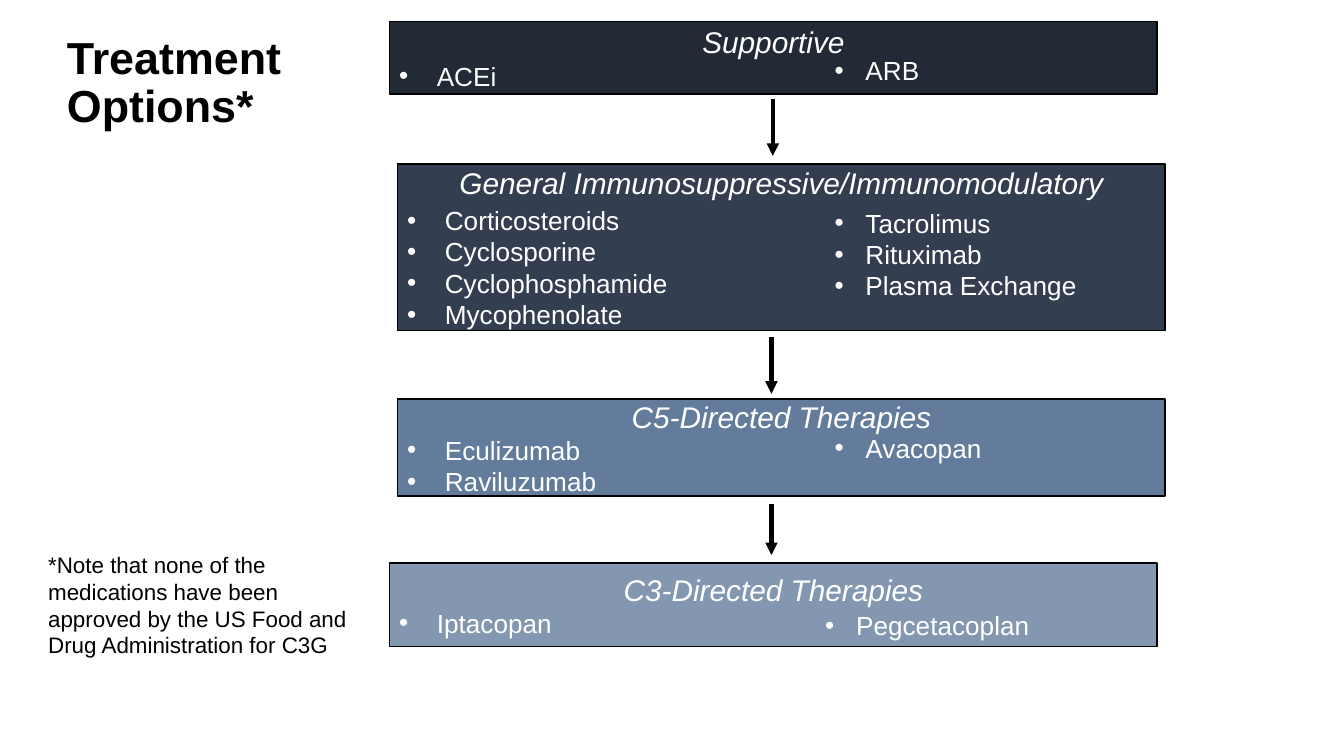
from lxml import etree
from pptx import Presentation
from pptx.dml.color import RGBColor
from pptx.enum.shapes import MSO_CONNECTOR, MSO_SHAPE
from pptx.enum.text import MSO_ANCHOR, PP_ALIGN
from pptx.oxml.ns import qn
from pptx.util import Inches, Pt

BLACK = RGBColor(0x00, 0x00, 0x00)
WHITE = RGBColor(0xFF, 0xFF, 0xFF)
NAVY = RGBColor(0x22, 0x2A, 0x35)
SLATE = RGBColor(0x33, 0x3F, 0x50)
STEEL = RGBColor(0x64, 0x7C, 0x9C)
MIST = RGBColor(0x84, 0x97, 0xB0)
TOP, MIDDLE, BOTTOM = MSO_ANCHOR.TOP, MSO_ANCHOR.MIDDLE, MSO_ANCHOR.BOTTOM
LEFT, CENTER = PP_ALIGN.LEFT, PP_ALIGN.CENTER

BOX_WIDTH = 5.71
COLUMN_WIDTH = 2.46
LINE_HEIGHT = 0.24


def set_frame(shape, anchor, margins):
    """Wrap the text, anchor it and set (side, top and bottom) margins in inches."""
    frame = shape.text_frame
    side, end = margins
    settings = {
        "word_wrap": True, "vertical_anchor": anchor,
        "margin_left": Inches(side), "margin_right": Inches(side),
        "margin_top": Inches(end), "margin_bottom": Inches(end),
    }
    for name, value in settings.items():
        setattr(frame, name, value)
    return frame


def write(frame, text, size, color, indent=0, alignment=LEFT, **font_format):
    """Fill the empty first paragraph or add one; an indent gives it a bullet."""
    paragraph = frame.paragraphs[0]
    if paragraph.runs:
        paragraph = frame.add_paragraph()
    paragraph.alignment = alignment
    if indent:
        properties = paragraph._p.get_or_add_pPr()
        properties.set("marL", str(Inches(indent)))
        properties.set("indent", str(-Inches(indent)))
        etree.SubElement(properties, qn("a:buFont"), typeface="Arial")
        etree.SubElement(properties, qn("a:buChar"), char="•")
    run = paragraph.add_run()
    run.text = text
    run.font.color.rgb = color
    font_format.update(name="Arial", size=Pt(size))
    for name, value in font_format.items():
        setattr(run.font, name, value)
    return paragraph


presentation = Presentation()
presentation.slide_width = Inches(10)
presentation.slide_height = Inches(10) * 9 // 16
slide = presentation.slides.add_slide(presentation.slide_layouts[6])

# Box left, top, height, fill; heading; left drugs and the gap above them in
# points; right drugs with the left and bottom of their column
stages = [
    (2.9, 0.16, 0.54, NAVY, "Supportive", ["ACEi"], 0, ["ARB"], 6.21, 0.64),
    (2.96, 1.22, 1.24, SLATE, "General Immunosuppressive/Immunomodulatory",
     ["Corticosteroids", "Cyclosporine", "Cyclophosphamide", "Mycophenolate"], 2,
     ["Tacrolimus", "Rituximab", "Plasma Exchange"], 6.21, 2.24),
    (2.96, 2.97, 0.72, STEEL, "C5-Directed Therapies",
     ["Eculizumab", "Raviluzumab"], 0, ["Avacopan"], 6.21, 3.45),
    (2.9, 4.19, 0.62, MIST, "C3-Directed Therapies",
     ["Iptacopan"], 0, ["Pegcetacoplan"], 6.14, 4.77),
]
for (left, top, height, fill, heading, left_drugs, gap,
     right_drugs, column_left, column_bottom) in stages:
    box = slide.shapes.add_shape(
        MSO_SHAPE.RECTANGLE, Inches(left), Inches(top), Inches(BOX_WIDTH), Inches(height))
    box.shadow.inherit = False
    box.fill.solid()
    box.fill.fore_color.rgb = fill
    box.line.color.rgb = BLACK
    box.line.width = Pt(0.75)
    frame = set_frame(box, MIDDLE, (0.07, 0.04))
    write(frame, heading, 16, WHITE, alignment=CENTER, italic=True)
    for drug in left_drugs:
        write(frame, drug, 14, WHITE, indent=0.28)
    frame.paragraphs[1].space_before = Pt(gap)

    column_height = LINE_HEIGHT * len(right_drugs)
    column = slide.shapes.add_textbox(
        Inches(column_left), Inches(column_bottom - column_height),
        Inches(COLUMN_WIDTH), Inches(column_height))
    frame = set_frame(column, BOTTOM, (0, 0))
    for drug in right_drugs:
        write(frame, drug, 14, WHITE, indent=0.23)

for x, start, end in [(5.75, 0.74, 1.16), (5.74, 2.51, 2.93), (5.74, 3.75, 4.13)]:
    arrow = slide.shapes.add_connector(
        MSO_CONNECTOR.STRAIGHT, Inches(x), Inches(start), Inches(x), Inches(end))
    arrow.line.color.rgb = BLACK
    arrow.line.width = Pt(2.25)
    etree.SubElement(arrow.line._get_or_add_ln(), qn("a:tailEnd"), type="triangle")
    etree.SubElement(arrow._element.spPr, qn("a:effectLst"))

title = slide.shapes.add_textbox(Inches(0.4), Inches(0.08), Inches(2.3), Inches(1.09))
frame = set_frame(title, MIDDLE, (0.1, 0.05))
write(frame, "Treatment Options*", 24, BLACK, bold=True).line_spacing = 0.9

note = slide.shapes.add_textbox(Inches(0.26), Inches(4.05), Inches(2.59), Inches(0.91))
frame = set_frame(note, TOP, (0.1, 0.05))
write(frame, "*Note that none of the medications have been approved by the US Food "
      "and Drug Administration for C3G", 12, BLACK)

presentation.save("out.pptx")
